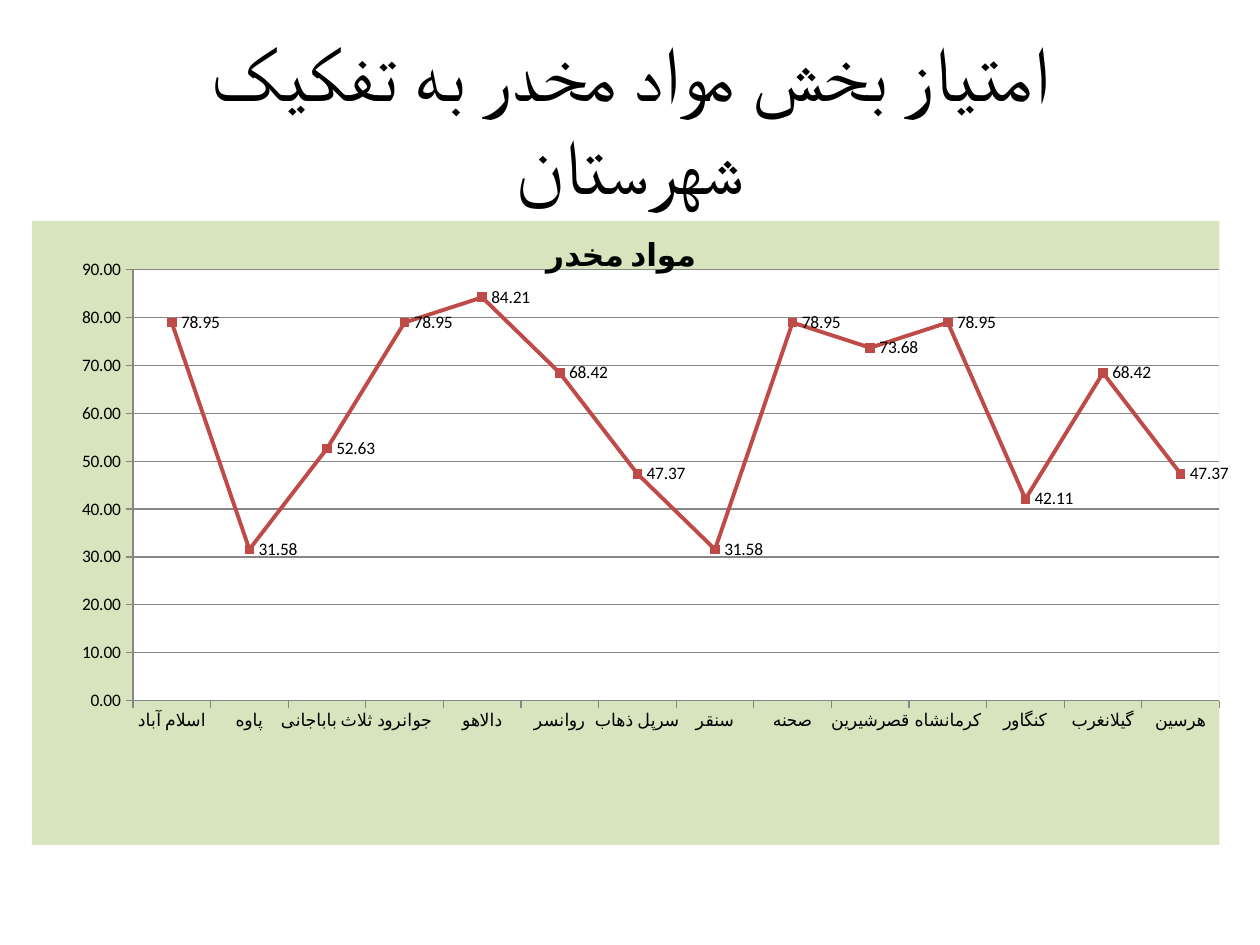
"""Build a slide with a line chart of drug-section scores by county."""
from lxml import etree
from pptx import Presentation
from pptx.chart.data import CategoryChartData
from pptx.dml.color import RGBColor
from pptx.enum.chart import XL_CHART_TYPE, XL_LABEL_POSITION, XL_MARKER_STYLE, XL_TICK_MARK
from pptx.enum.text import MSO_ANCHOR, PP_ALIGN
from pptx.oxml.ns import qn
from pptx.util import Pt

LINE_MARKERS = XL_CHART_TYPE.LINE_MARKERS
RIGHT = XL_LABEL_POSITION.RIGHT
SQUARE = XL_MARKER_STYLE.SQUARE
OUTSIDE = XL_TICK_MARK.OUTSIDE
MIDDLE = MSO_ANCHOR.MIDDLE
CENTER = PP_ALIGN.CENTER
SCALE = 914400 / 126
FONT = "Calibri"
BLACK, WHITE, GREEN, RED, GRAY = "000000", "FFFFFF", "D7E4BD", "BE4B48", "868686"
SCORES = {
    "اسلام آباد": 78.95,
    "پاوه": 31.58,
    "ثلاث باباجانی": 52.63,
    "جوانرود": 78.95,
    "دالاهو": 84.21,
    "روانسر": 68.42,
    "سرپل ذهاب": 47.37,
    "سنقر": 31.58,
    "صحنه": 78.95,
    "قصرشیرین": 73.68,
    "کرمانشاه": 78.95,
    "کنگاور": 42.11,
    "گیلانغرب": 68.42,
    "هرسین": 47.37,
}


def paint(target, color):
    target.fill.solid()
    target.fill.fore_color.rgb = RGBColor.from_string(color)


def write(frame, text, size=18, bold=False, color=BLACK):
    para = frame.paragraphs[0]
    para.alignment = CENTER
    para._p.get_or_add_pPr().set("rtl", "1")
    span = para.add_run()
    span.text = text
    span.font.size = Pt(size)
    span.font.bold = bold
    paint(span.font, color)
    span.font.name = FONT
    etree.SubElement(span._r.get_or_add_rPr(), qn("a:cs")).set("typeface", FONT)


deck = Presentation()
deck.slide_width, deck.slide_height = round(1260 * SCALE), round(945 * SCALE)
page = deck.slides.add_slide(deck.slide_layouts[6])

box = page.shapes.add_textbox(*[round(n * SCALE) for n in (63, 38, 1134, 158)])
frame = box.text_frame
frame.word_wrap = True
frame.vertical_anchor = MIDDLE
frame.margin_left = frame.margin_right = round(50 * SCALE)
write(frame, "امتیاز بخش مواد مخدر به تفکیک شهرستان", size=44)

data = CategoryChartData(number_format="0.00")
data.categories = list(SCORES)
data.add_series("مواد مخدر", list(SCORES.values()))
area = [round(n * SCALE) for n in (32, 221, 1197, 624)]
chart = page.shapes.add_chart(LINE_MARKERS, *area, data).chart
chart.has_legend = False
chart.font.name = FONT
chart.font.size = Pt(10)
chart.font.color.rgb = RGBColor.from_string(BLACK)
chart.has_title = True
write(chart.chart_title.text_frame, "مواد مخدر", bold=True)

scores_axis = chart.value_axis
scores_axis.minimum_scale, scores_axis.maximum_scale, scores_axis.major_unit = 0, 90, 10
scores_axis.tick_labels.number_format = "0.00"
scores_axis.tick_labels.number_format_is_linked = False
scores_axis.has_major_gridlines = True
for axis in (chart.category_axis, scores_axis):
    axis.major_tick_mark = OUTSIDE
for line in (chart.category_axis.format.line, scores_axis.format.line,
             scores_axis.major_gridlines.format.line):
    line.width = Pt(0.75)
    paint(line, GRAY)

plot = chart.plots[0]
plot.vary_by_categories = False
series = plot.series[0]
series.smooth = False
series.format.line.width = Pt(2.25)
paint(series.format.line, RED)
series.marker.style = SQUARE
series.marker.size = 5
paint(series.marker.format, RED)
paint(series.marker.format.line, RED)
labels = series.data_labels
labels.show_value = True
labels.position = RIGHT
labels.number_format = "0.00"
labels.number_format_is_linked = False

plot_area = chart._chartSpace.chart.plotArea
title = chart._chartSpace.chart.find(qn("c:title"))
plot_place = {"layoutTarget": "inner", "xMode": "edge", "yMode": "edge",
              "x": 0.107, "y": 0.078, "w": 0.915, "h": 0.691}
title_place = {"xMode": "edge", "yMode": "edge", "x": 0.428, "y": 0.01}
for parent, index, place in ((plot_area, 0, plot_place), (title, 1, title_place)):
    for old in parent.findall(qn("c:layout")):
        parent.remove(old)
    layout = etree.Element(qn("c:layout"))
    parent.insert(index, layout)
    manual = etree.SubElement(layout, qn("c:manualLayout"))
    for name, value in place.items():
        etree.SubElement(manual, qn(f"c:{name}")).set("val", str(value))

for parent, color in ((plot_area, WHITE), (chart._chartSpace, GREEN)):
    look = etree.Element(qn("c:spPr"))
    fill = etree.SubElement(look, qn("a:solidFill"))
    etree.SubElement(fill, qn("a:srgbClr")).set("val", color)
    etree.SubElement(etree.SubElement(look, qn("a:ln")), qn("a:noFill"))
    if parent is plot_area:
        parent.append(look)
    else:
        parent.chart.addnext(look)

deck.save("out.pptx")
